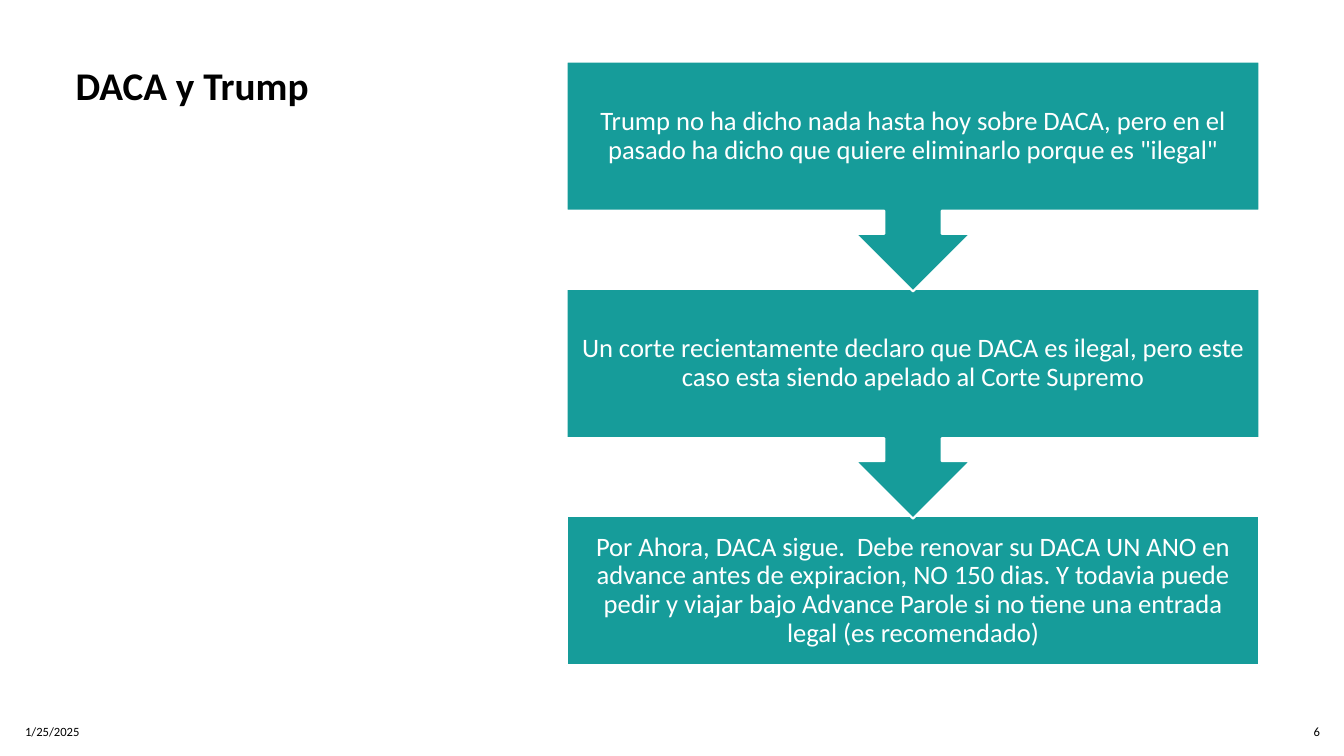
from pptx import Presentation
from pptx import util as u
from pptx.dml.color import RGBColor
from pptx.enum import shapes, text

TEAL = RGBColor(0x16, 0x9C, 0x9A)
WHITE = RGBColor(0xFF, 0xFF, 0xFF)
BLACK = RGBColor(0, 0, 0)

# Grid of 100 columns by 100 rows
TOP = 8.13
FLOW_LEFT, FLOW_WIDTH = 42.16, 51.54
STEP_PITCH, STEP_HEIGHT, CALLOUT_HEIGHT = 30.07, 19.73, 30.4
FOOTER_TOP, FOOTER_HEIGHT = 94.13, 5.33

STEPS = [
    'Trump no ha dicho nada hasta hoy sobre DACA, pero en el pasado '
    'ha dicho que quiere eliminarlo porque es "ilegal"',
    "Un corte recientamente declaro que DACA es ilegal, pero este caso "
    "esta siendo apelado al Corte Supremo",
    "Por Ahora, DACA sigue.  Debe renovar su DACA UN ANO en advance antes "
    "de expiracion, NO 150 dias. Y todavia puede pedir y viajar bajo "
    "Advance Parole si no tiene una entrada legal (es recomendado)",
]


class SlideBuilder:
    font = "Calibri"

    def __init__(self, deck):
        self.column = deck.slide_width / 100
        self.row = deck.slide_height / 100
        self.page = deck.slides.add_slide(deck.slide_layouts[5])

    def area(self, left, top, width, height):
        return (round(left * self.column), round(top * self.row),
                round(width * self.column), round(height * self.row))

    def set_words(self, shape, words, size, color, align, anchor, bold=False, spacing=1.0):
        frame = shape.text_frame
        frame.text = words
        frame.word_wrap = True
        frame.auto_size = text.MSO_AUTO_SIZE.NONE
        frame.vertical_anchor = anchor
        para = frame.paragraphs[0]
        para.alignment = align
        para.line_spacing = spacing
        for span in para.runs:
            span.font.name = self.font
            span.font.size = u.Pt(size)
            span.font.bold = bold
            span.font.color.rgb = color

    def title(self, words, *cells):
        box = self.page.shapes.title
        box.left, box.top, box.width, box.height = self.area(*cells)
        self.set_words(box, words, 28, BLACK, text.PP_ALIGN.LEFT,
                       text.MSO_ANCHOR.TOP, bold=True, spacing=0.9)

    def footer(self, words, left, width, align):
        box = self.page.shapes.add_textbox(
            *self.area(left, FOOTER_TOP, width, FOOTER_HEIGHT))
        self.set_words(box, words, 9, BLACK, align, text.MSO_ANCHOR.MIDDLE)

    def step(self, words, top, kind, height):
        box = self.page.shapes.add_shape(
            kind, *self.area(FLOW_LEFT, top, FLOW_WIDTH, height))
        box.shadow.inherit = False
        box.fill.solid()
        box.fill.fore_color.rgb = TEAL
        box.line.color.rgb = WHITE
        box.line.width = u.Pt(1.5)
        frame = box.text_frame
        frame.margin_left = frame.margin_right = u.Inches(0.15)
        frame.margin_top = frame.margin_bottom = u.Inches(0.15)
        self.set_words(box, words, 19, WHITE, text.PP_ALIGN.CENTER,
                       text.MSO_ANCHOR.MIDDLE, spacing=0.9)


def main():
    deck = Presentation()
    deck.slide_width, deck.slide_height = u.Inches(13.33), u.Inches(7.5)
    builder = SlideBuilder(deck)

    # Title and footer
    builder.title("DACA y Trump", 4.88, TOP, 29.48, 25.6)
    builder.footer("1/25/2025", 1.13, 28.66, text.PP_ALIGN.LEFT)
    builder.footer("6", 95.42, 3.53, text.PP_ALIGN.RIGHT)

    # Flow, drawn from the bottom up so each arrow tip lies over the next step
    last = len(STEPS) - 1
    for index in range(last, -1, -1):
        if index == last:
            kind, height = shapes.MSO_SHAPE.RECTANGLE, STEP_HEIGHT
        else:
            kind, height = shapes.MSO_SHAPE.DOWN_ARROW_CALLOUT, CALLOUT_HEIGHT
        builder.step(STEPS[index], TOP + index * STEP_PITCH, kind, height)

    deck.save("out.pptx")


if __name__ == "__main__":
    main()
